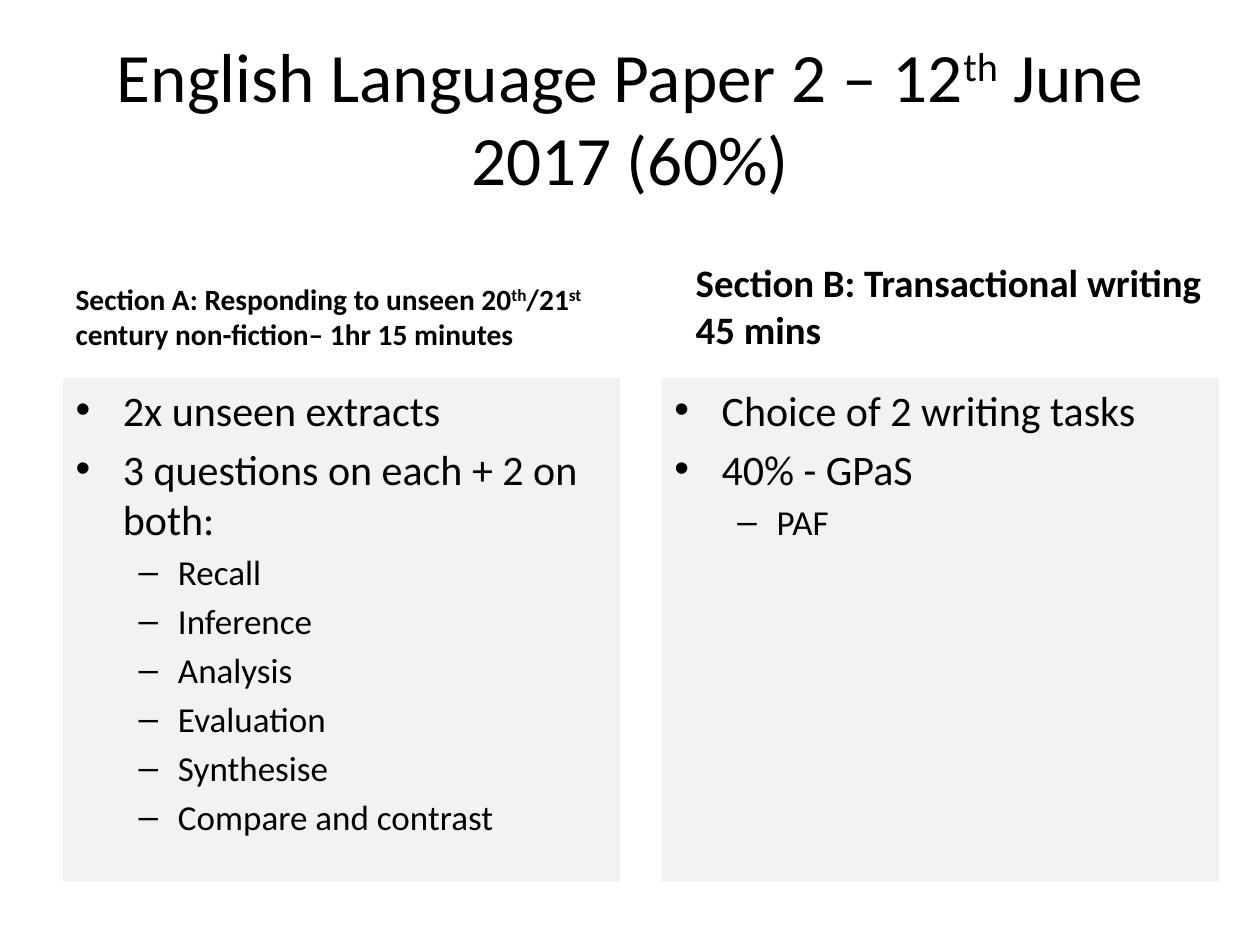
import pptx
import pptx.util
import pptx.dml.color
import pptx.enum.text

Cm, Pt = pptx.util.Cm, pptx.util.Pt
enum = pptx.enum.text
HUES = {"text": "000000", "panel": "F2F2F2"}
FACE = "Calibri"


def style(run, size, bold=False):
    run.font.name = FACE
    run.font.size = Pt(size)
    run.font.bold = bold
    run.font.color.rgb = pptx.dml.color.RGBColor.from_string(HUES["text"])


def place(shape, left, top, width, height, anchor):
    shape.left, shape.top = Cm(left), Cm(top)
    shape.width, shape.height = Cm(width), Cm(height)
    frame = shape.text_frame
    frame.word_wrap = True
    frame.auto_size = enum.MSO_AUTO_SIZE.NONE
    frame.vertical_anchor = anchor
    return frame


deck = pptx.Presentation()
deck.slide_width, deck.slide_height = Cm(25.4), Cm(19.05)
slide = deck.slides.add_slide(deck.slide_layouts[4])
title, head_a, list_a, head_b, list_b = slide.placeholders

# Title and section headings: every second part is superscript
heads = [
    (title, 1.27, 0.76, 22.86, 3.18, enum.MSO_ANCHOR.MIDDLE, 39.6, False,
     ["English Language Paper 2 – 12", "th", " June 2017 (60%)"]),
    (head_a, 1.27, 5.44, 11.23, 1.78, enum.MSO_ANCHOR.BOTTOM, 16.8, True,
     ["Section A: Responding to unseen 20", "th", "/21", "st",
      " century non-fiction– 1hr 15 minutes"]),
    (head_b, 13.77, 5.44, 11.23, 1.78, enum.MSO_ANCHOR.BOTTOM, 22.2, True,
     ["Section B: Transactional writing 45 mins"]),
]
for shape, left, top, width, height, anchor, size, bold, parts in heads:
    para = place(shape, left, top, width, height, anchor).paragraphs[0]
    para.space_before = Pt(0)
    for i, part in enumerate(parts):
        run = para.add_run()
        run.text = part
        style(run, size, bold)
        if i % 2:
            run.font._element.set("baseline", "30000")

# Grey panels with two-level lists
panels = [
    (list_a, 1.27, [
        (0, "2x unseen extracts"), (0, "3 questions on each + 2 on both:"),
        (1, "Recall"), (1, "Inference"), (1, "Analysis"),
        (1, "Evaluation"), (1, "Synthesise"), (1, "Compare and contrast")]),
    (list_b, 13.34, [
        (0, "Choice of 2 writing tasks"), (0, "40% - GPaS"), (1, "PAF")]),
]
for shape, left, items in panels:
    frame = place(shape, left, 7.62, 11.23, 10.16, enum.MSO_ANCHOR.TOP)
    shape.fill.solid()
    shape.fill.fore_color.rgb = pptx.dml.color.RGBColor.from_string(HUES["panel"])
    frame.text = "\n".join(text for _, text in items)
    frame.paragraphs[0].space_before = Pt(0)
    for para, (level, _) in zip(frame.paragraphs, items):
        para.level = level
        style(para.runs[0], (24, 20)[level])

deck.save("out.pptx")
